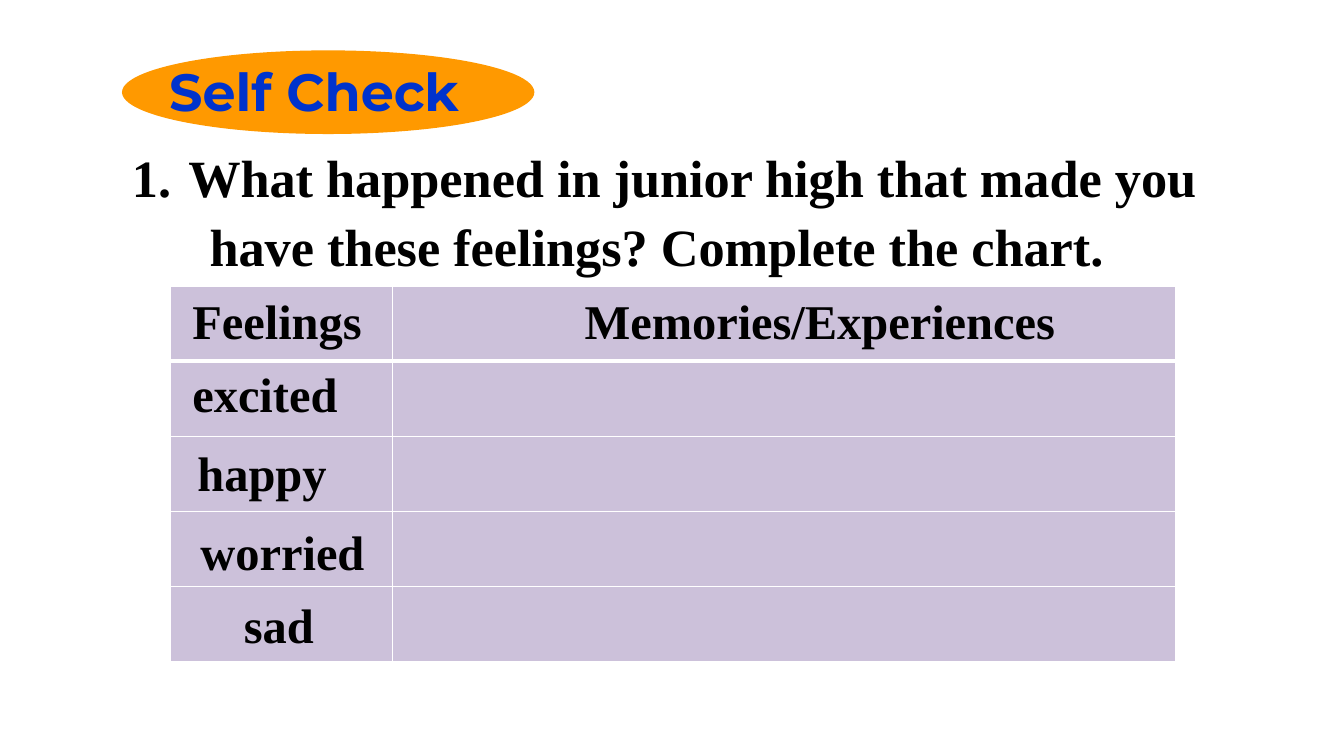
from dataclasses import dataclass

from lxml import etree
from pptx import Presentation
from pptx.dml.color import RGBColor
from pptx.enum.shapes import MSO_SHAPE
from pptx.enum.text import MSO_AUTO_SIZE
from pptx.oxml.ns import qn
from pptx.util import Pt

OVAL = MSO_SHAPE.OVAL
GROW = MSO_AUTO_SIZE.SHAPE_TO_FIT_TEXT
EMU_PER_PX = 9144  # 100 px to the inch


@dataclass(frozen=True)
class Theme:
    badge: RGBColor = RGBColor(0xFF, 0x99, 0x00)
    title: RGBColor = RGBColor(0x00, 0x33, 0xCC)
    ink: RGBColor = RGBColor(0x00, 0x00, 0x00)
    cell: RGBColor = RGBColor(0xCC, 0xC1, 0xDA)
    border: RGBColor = RGBColor(0xFF, 0xFF, 0xFF)
    title_font: str = "Montserrat"
    body_font: str = "Times New Roman"
    large: float = 37.35
    medium: float = 34.6
    thin: int = 1
    thick: int = 3


THEME = Theme()

QUESTION = [
    "What happened in junior high that made you",
    "have these feelings? Complete the chart.",
]
COLUMN_WIDTHS = [220, 777]
ROW_COUNT, TABLE_HEIGHT = 5, 372
LABEL_HEIGHT = 68
# Each label: wording, left, top, width
LABELS = [
    ("Feelings", 181, 284, 220),
    ("Memories/Experiences", 570, 284, 575),
    ("excited", 181, 356, 220),
    ("happy", 186, 435, 162),
    ("worried", 189, 513, 190),
    ("sad", 232, 585, 190),
]


def px(length):
    return length * EMU_PER_PX


def add_bold_run(paragraph, wording, size, font=THEME.body_font, color=THEME.ink):
    run = paragraph.add_run()
    run.text = wording
    run.font.name = font
    run.font.size = Pt(size)
    run.font.bold = True
    run.font.color.rgb = color


def add_text_frame(parent, left, top, width, height):
    frame = parent.shapes.add_textbox(px(left), px(top), px(width), px(height)).text_frame
    frame.word_wrap = True
    frame.auto_size = GROW
    return frame


def indent(paragraph, margin, first_line=0):
    properties = paragraph._p.get_or_add_pPr()
    properties.set("marL", str(px(margin)))
    properties.set("indent", str(px(first_line)))
    return properties


def add_title_badge(slide):
    badge = slide.shapes.add_group_shape()
    oval = badge.shapes.add_shape(OVAL, px(121), px(50), px(409), px(83))
    oval.shadow.inherit = False
    oval.fill.solid()
    oval.fill.fore_color.rgb = THEME.badge
    oval.line.fill.background()
    title = add_text_frame(badge, 158, 54, 398, 73).paragraphs[0]
    add_bold_run(title, "Self Check", THEME.large, THEME.title_font, THEME.title)


def add_question(slide):
    frame = add_text_frame(slide, 121, 133, 1119, 148)
    numbered, continuation = frame.paragraphs[0], frame.add_paragraph()
    for paragraph, wording in zip((numbered, continuation), QUESTION):
        paragraph.line_spacing = 1.1
        add_bold_run(paragraph, wording, THEME.large)
    numbering = etree.SubElement(indent(numbered, 56, -56), qn("a:buAutoNum"))
    numbering.set("type", "arabicPeriod")
    indent(continuation, 77)


def style_cell(cell, bottom, top):
    """Give the cell its borders, then its fill, in schema order."""
    properties = cell._tc.get_or_add_tcPr()
    widths = {"a:lnL": THEME.thin, "a:lnR": THEME.thin, "a:lnT": top, "a:lnB": bottom}
    for side, width in widths.items():
        line = etree.SubElement(properties, qn(side), w=str(Pt(width)))
        fill = etree.SubElement(line, qn("a:solidFill"))
        etree.SubElement(fill, qn("a:srgbClr"), val=str(THEME.border))
    cell.fill.solid()
    cell.fill.fore_color.rgb = THEME.cell


def add_feelings_table(slide):
    table = slide.shapes.add_table(
        ROW_COUNT, len(COLUMN_WIDTHS),
        px(169), px(284), px(sum(COLUMN_WIDTHS)), px(TABLE_HEIGHT),
    ).table
    for column, width in zip(table.columns, COLUMN_WIDTHS):
        column.width = px(width)
    for index, row in enumerate(table.rows):
        bottom = THEME.thick if index == 0 else THEME.thin
        top = THEME.thick if index == 1 else THEME.thin
        for cell in row.cells:
            style_cell(cell, bottom, top)


def add_labels(slide):
    for wording, left, top, width in LABELS:
        label = add_text_frame(slide, left, top, width, LABEL_HEIGHT)
        add_bold_run(label.paragraphs[0], wording, THEME.medium)


def main():
    deck = Presentation()
    deck.slide_width, deck.slide_height = px(1333), px(750)
    slide = deck.slides.add_slide(deck.slide_layouts[6])
    add_title_badge(slide)
    add_question(slide)
    add_feelings_table(slide)
    add_labels(slide)
    deck.save("out.pptx")


if __name__ == "__main__":
    main()
